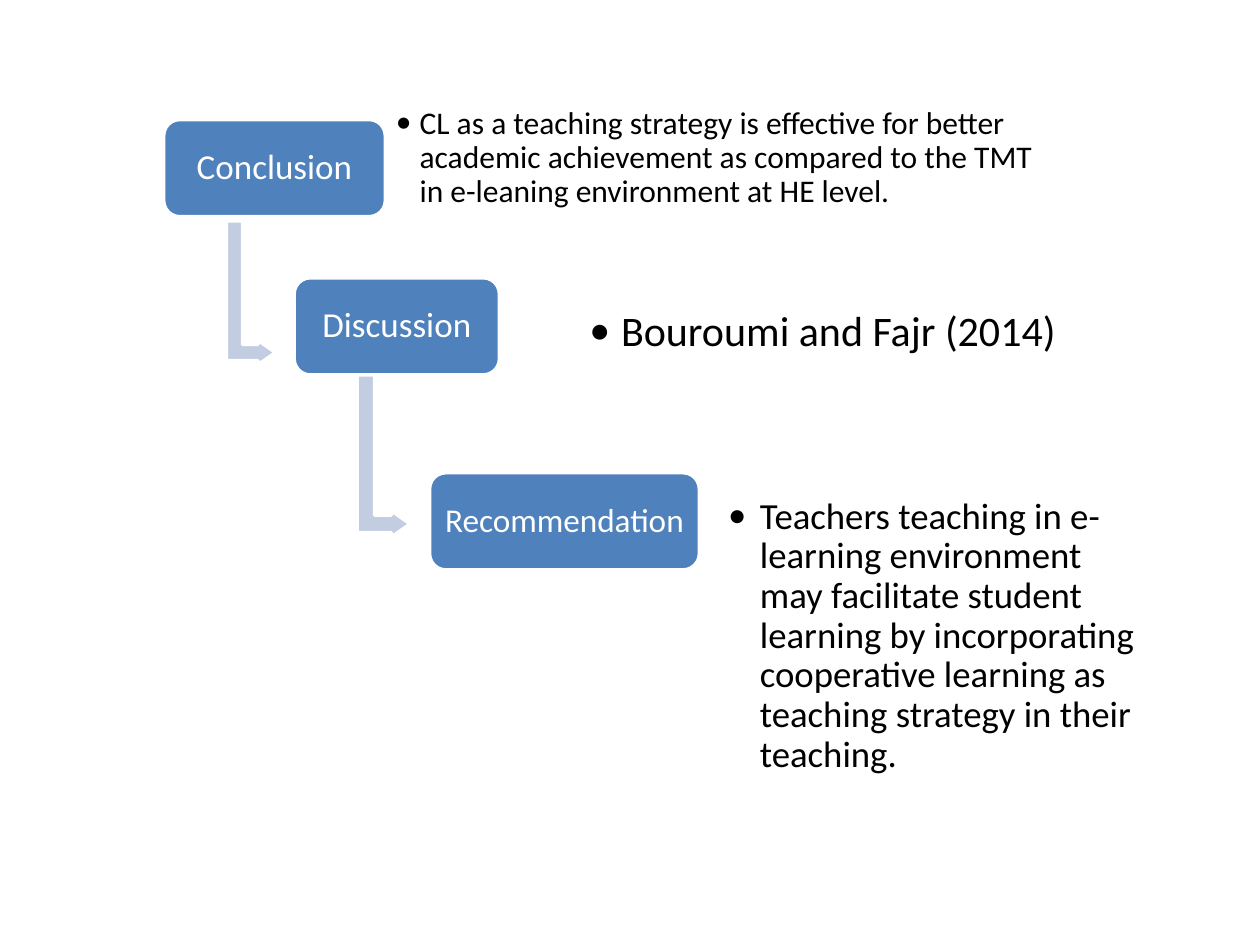
from dataclasses import dataclass

from lxml.etree import SubElement
from pptx import Presentation
from pptx.dml.color import RGBColor
from pptx.enum.shapes import MSO_SHAPE as Preset
from pptx.enum.text import MSO_ANCHOR as Anchor, PP_ALIGN as Align
from pptx.oxml.ns import qn
from pptx.util import Cm, Pt


@dataclass(frozen=True)
class Theme:
    """Colours, font and type sizes of the slide."""
    font: str = "Calibri"
    step_fill: RGBColor = RGBColor(0x4F, 0x81, 0xBD)
    arrow_fill: RGBColor = RGBColor(0xC2, 0xCD, 0xE1)
    edge: RGBColor = RGBColor(0xFF, 0xFF, 0xFF)
    step_text: RGBColor = RGBColor(0xFF, 0xFF, 0xFF)
    detail_text: RGBColor = RGBColor(0, 0, 0)
    edge_width: int = 2
    step_sizes: tuple = (20, 20, 19)
    detail_sizes: tuple = (18, 24, 21)
    line_spacing: float = 0.9


THEME = Theme()
STEP_HEIGHT = 1.96
STEP_INSET = 0.12

STEPS = (
    ("Conclusion", (3.3, 2.41, 4.47)),
    ("Discussion", (5.93, 5.6, 4.14)),
    ("Recommendation", (8.66, 9.53, 5.44)),
)
DETAILS = (
    ("CL as a teaching strategy is effective for better academic achievement "
     "as compared to the TMT in e-leaning environment at HE level.",
     (7.8, 1.04, 13.77, 4.29), 0.18, 0.48),
    ("Bouroumi and Fajr (2014)", (11.63, 5.59, 12.22, 2.24), 0.25, 0.64),
    ("Teachers teaching in e-learning environment may facilitate student "
     "learning by incorporating cooperative learning as teaching strategy "
     "in their teaching.",
     (14.4, 9.37, 8.99, 6.91), 0.28, 0.64),
)
ARROWS = ((3.61, 5.41, 2.9, 0.99), (5.64, 8.2, 4.19, 1.07))


def add_preset(slide, preset, place, fill, adjustments):
    """Add a filled preset shape with the common edge."""
    shape = slide.shapes.add_shape(preset, *map(Cm, place))
    shape.shadow.inherit = False
    shape.fill.solid()
    shape.fill.fore_color.rgb = fill
    shape.line.color.rgb = THEME.edge
    shape.line.width = Pt(THEME.edge_width)
    for index, value in enumerate(adjustments):
        shape.adjustments[index] = value
    return shape


def write(frame, wording, size, color, inset):
    """Write one vertically centred paragraph and return it."""
    frame.text = wording
    frame.word_wrap = True
    frame.vertical_anchor = Anchor.MIDDLE
    frame.margin_left = frame.margin_right = Cm(inset)
    frame.margin_top = frame.margin_bottom = Cm(inset)
    paragraph = frame.paragraphs[0]
    paragraph.line_spacing = THEME.line_spacing
    font = paragraph.runs[0].font
    font.name = THEME.font
    font.size = Pt(size)
    font.color.rgb = color
    return paragraph


def add_step(slide, title, place, size):
    """Add a rounded step box with its title."""
    step = add_preset(slide, Preset.ROUNDED_RECTANGLE, (*place, STEP_HEIGHT),
                      THEME.step_fill, (0.167,))
    heading = write(step.text_frame, title, size, THEME.step_text, STEP_INSET)
    heading.alignment = Align.CENTER


def add_detail(slide, wording, place, inset, indent, size):
    """Add a bulleted explanation beside a step."""
    detail = slide.shapes.add_textbox(*map(Cm, place))
    bullet = write(detail.text_frame, wording, size, THEME.detail_text, inset)
    bullet.level = 1
    properties = bullet._p.get_or_add_pPr()
    properties.set("marL", str(Cm(indent)))
    properties.set("indent", str(-Cm(indent)))
    SubElement(properties, qn("a:buFont")).set("typeface", THEME.font)
    SubElement(properties, qn("a:buChar")).set("char", "•")


def add_arrow(slide, place):
    """Add a bent arrow that leads down to the next step."""
    arrow = add_preset(slide, Preset.BENT_UP_ARROW, place,
                       THEME.arrow_fill, (0.328, 0.25, 0.358))
    arrow.rotation = 90


def main():
    """Build and save the slide."""
    deck = Presentation()
    deck.slide_width, deck.slide_height = Cm(25.4), Cm(19.05)
    slide = deck.slides.add_slide(deck.slide_layouts[6])
    for place in ARROWS:
        add_arrow(slide, place)
    for step, size in zip(STEPS, THEME.step_sizes):
        add_step(slide, *step, size)
    for detail, size in zip(DETAILS, THEME.detail_sizes):
        add_detail(slide, *detail, size)
    deck.save("out.pptx")


if __name__ == "__main__":
    main()
